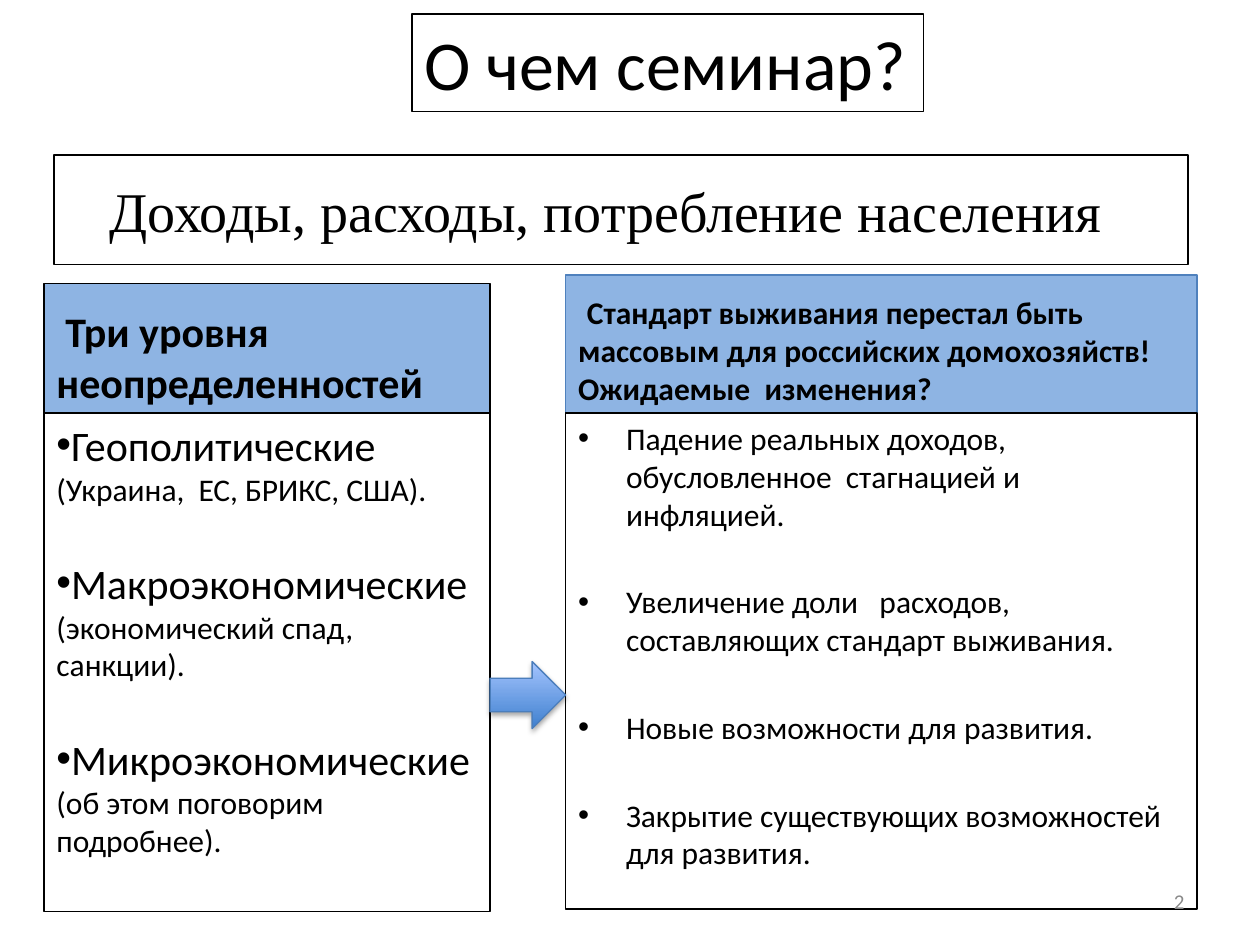
"""Build the seminar overview slide: topic, uncertainties and expected changes."""
from dataclasses import dataclass
from typing import Optional

from lxml.etree import SubElement
from pptx import Presentation
from pptx.dml.color import RGBColor
from pptx.enum.shapes import MSO_SHAPE
from pptx.enum.text import MSO_ANCHOR, PP_ALIGN
from pptx.oxml.ns import qn
from pptx.util import Inches, Pt

SLIDE_WIDTH, SLIDE_HEIGHT = Inches(10), Inches(7.5)
BLACK, SKY, BLUE = "000000", "8EB4E3", "4F81BD"
ITEM_GAP = 28.5
LEFT_COLUMN, LEFT_WIDTH = 3.5, 35.4
RIGHT_COLUMN, RIGHT_WIDTH = 44.9, 50.1
LISTS_TOP = 43.7


@dataclass
class Area:
    """Position and size as percentages of the slide."""
    left: float
    top: float
    width: float
    height: float

    def emu(self) -> tuple[int, int, int, int]:
        """Return left, top, width and height in EMU."""
        return (int(SLIDE_WIDTH * self.left / 100), int(SLIDE_HEIGHT * self.top / 100),
                int(SLIDE_WIDTH * self.width / 100), int(SLIDE_HEIGHT * self.height / 100))


@dataclass
class Panel:
    """A text panel; each item is a list of (text, size) pieces."""
    area: Area
    items: list[list[tuple[str, int]]]
    fill: Optional[str] = None
    line: Optional[str] = BLACK
    font: str = "Calibri"
    color: str = BLACK
    bold: bool = False
    align: PP_ALIGN = PP_ALIGN.LEFT
    anchor: MSO_ANCHOR = MSO_ANCHOR.TOP
    wrap: bool = True
    bullet: bool = False
    margin: float = 0
    indent: float = 0
    right_inset: float = 0.1


def rgb(value: str) -> RGBColor:
    """Turn a hex string into a colour."""
    return RGBColor.from_string(value)


def set_paragraph_marks(paragraph, panel: Panel) -> None:
    """Set the indents and the bullet of a paragraph."""
    properties = paragraph._p.get_or_add_pPr()
    properties.set("marL", str(Inches(panel.margin)))
    properties.set("indent", str(Inches(panel.indent)))
    if panel.bullet:
        SubElement(properties, qn("a:buFont")).set("typeface", "Arial")
        SubElement(properties, qn("a:buChar")).set("char", "•")


def draw_panel(slide, panel: Panel) -> None:
    """Draw a panel with its text."""
    box = slide.shapes.add_textbox(*panel.area.emu())
    if panel.fill:
        box.fill.solid()
        box.fill.fore_color.rgb = rgb(panel.fill)
    if panel.line:
        box.line.color.rgb = rgb(panel.line)
        box.line.width = Pt(0.75)
    frame = box.text_frame
    frame.word_wrap = panel.wrap
    frame.vertical_anchor = panel.anchor
    frame.margin_right = Inches(panel.right_inset)
    for number, pieces in enumerate(panel.items):
        paragraph = frame.add_paragraph() if number else frame.paragraphs[0]
        paragraph.alignment = panel.align
        paragraph.space_before = Pt(ITEM_GAP if number else 0)
        set_paragraph_marks(paragraph, panel)
        for words, size in pieces:
            run = paragraph.add_run()
            run.text = words
            run.font.name = panel.font
            run.font.size = Pt(size)
            run.font.bold = panel.bold
            run.font.color.rgb = rgb(panel.color)


def draw_arrow(slide, area: Area) -> None:
    """Draw the shaded arrow that joins the two columns."""
    arrow = slide.shapes.add_shape(MSO_SHAPE.RIGHT_ARROW, *area.emu())
    arrow.fill.gradient()
    arrow.fill.gradient_angle = 90
    for stop, color in zip(arrow.fill.gradient_stops, ("3F80CE", "A4C4FF")):
        stop.color.rgb = rgb(color)
    for stop, position in zip(arrow.fill.gradient_stops, (0, 1)):
        stop.position = position
    arrow.line.color.rgb = rgb("4B7EBC")
    arrow.line.width = Pt(0.75)
    arrow.shadow.inherit = False
    effects = arrow._element.spPr.find(qn("a:effectLst"))
    shadow = SubElement(effects, qn("a:outerShdw"), blurRad=str(Pt(3.1)),
                        dist=str(Pt(1.8)), dir="5400000", rotWithShape="0")
    shade = SubElement(shadow, qn("a:srgbClr"), val=BLACK)
    SubElement(shade, qn("a:alpha"), val="35000")


UNCERTAINTIES = [
    ("Геополитические ", "(Украина,  ЕС, БРИКС, США)."),
    ("Макроэкономические ", "(экономический спад, санкции)."),
    ("Микроэкономические ", "(об этом поговорим подробнее)."),
]
CHANGES = [
    "Падение реальных доходов, обусловленное  стагнацией и инфляцией.",
    "Увеличение доли   расходов, составляющих стандарт выживания.",
    "Новые возможности для развития.",
    "Закрытие существующих возможностей для развития.",
]
PANELS = [
    Panel(Area(4.3, 16.4, 90, 11.6), [[("Доходы, расходы, потребление населения", 32)]],
          font="Times New Roman", align=PP_ALIGN.CENTER, anchor=MSO_ANCHOR.MIDDLE,
          right_inset=0.34),
    Panel(Area(LEFT_COLUMN, 30, LEFT_WIDTH, LISTS_TOP - 30),
          [[("Три уровня неопределенностей", 24)]],
          fill=SKY, bold=True, anchor=MSO_ANCHOR.BOTTOM, indent=0.07),
    Panel(Area(LEFT_COLUMN, LISTS_TOP, LEFT_WIDTH, 52.8),
          [[(level, 24), (example, 18)] for level, example in UNCERTAINTIES], bullet=True),
    Panel(Area(RIGHT_COLUMN, 29.1, RIGHT_WIDTH, LISTS_TOP - 29.1),
          [[("Стандарт выживания перестал быть массовым для российских домохозяйств! "
             "Ожидаемые  изменения?", 18)]],
          fill=SKY, line=BLUE, bold=True, anchor=MSO_ANCHOR.BOTTOM, indent=0.07),
    Panel(Area(RIGHT_COLUMN, LISTS_TOP, RIGHT_WIDTH, 52.5),
          [[(change, 18)] for change in CHANGES], bullet=True, margin=0.38, indent=-0.38),
    Panel(Area(71.7, 92.7, 23.3, 5.3), [[("2", 12)]], line=None, color="898989",
          align=PP_ALIGN.RIGHT, anchor=MSO_ANCHOR.MIDDLE),
    Panel(Area(32.7, 1.5, 40.6, 10.3), [[("О чем семинар?", 40)]], wrap=False),
]


def main() -> None:
    """Build and save the slide."""
    presentation = Presentation()
    presentation.slide_width, presentation.slide_height = SLIDE_WIDTH, SLIDE_HEIGHT
    slide = presentation.slides.add_slide(presentation.slide_layouts[6])
    for panel in PANELS:
        draw_panel(slide, panel)
    gap_left = LEFT_COLUMN + LEFT_WIDTH
    draw_arrow(slide, Area(gap_left, 70, RIGHT_COLUMN - gap_left, 7.1))
    presentation.save("out.pptx")


if __name__ == "__main__":
    main()
